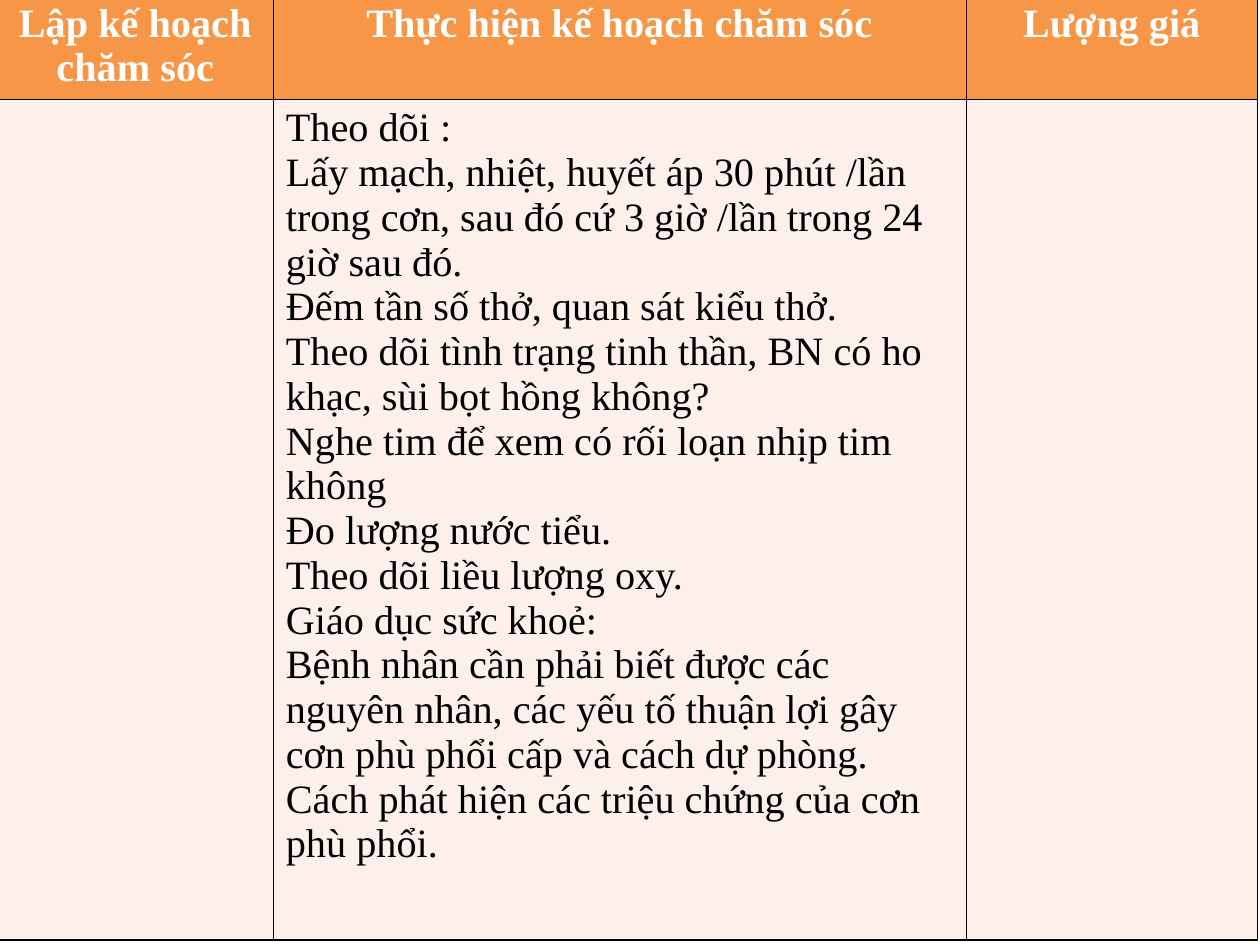
from lxml import etree
from pptx import Presentation
from pptx.dml.color import RGBColor
from pptx.enum.text import PP_ALIGN
from pptx.oxml.ns import qn
from pptx.util import Cm, Pt

ORANGE = RGBColor(0xF7, 0x96, 0x46)
PEACH = RGBColor(0xFD, 0xEF, 0xE9)
WHITE = RGBColor(0xFF, 0xFF, 0xFF)
BLACK = RGBColor(0x00, 0x00, 0x00)
CENTER, LEFT = PP_ALIGN.CENTER, PP_ALIGN.LEFT

WIDTHS = [5.56, 13.97, 5.87]
HEIGHTS = [2.11, 16.94]
HEADS = ["Lập kế hoạch chăm sóc", "Thực hiện kế hoạch chăm sóc", "Lượng giá"]
CARE = [
    "Theo dõi :",
    "Lấy mạch, nhiệt, huyết áp 30 phút /lần trong cơn, sau đó cứ 3 giờ /lần trong 24 giờ sau đó.",
    "Đếm tần số thở, quan sát kiểu thở.",
    "Theo dõi tình trạng tinh thần, BN có ho khạc, sùi bọt hồng không?",
    "Nghe tim để xem có rối loạn nhịp tim không",
    "Đo lượng nước tiểu.",
    "Theo dõi liều lượng oxy.",
    "Giáo dục sức khoẻ:",
    "Bệnh nhân cần phải biết được các nguyên nhân, các yếu tố thuận lợi gây cơn phù phổi cấp và cách dự phòng.",
    "Cách phát hiện các triệu chứng của cơn phù phổi.",
]
ROWS = [HEADS, ["", "\n".join(CARE), ""]]


def add_edges(cell):
    """Draw a thin black border on all four sides of the cell."""
    props = cell._tc.get_or_add_tcPr()
    for spot, side in enumerate(("a:lnL", "a:lnR", "a:lnT", "a:lnB")):
        line = etree.Element(qn(side), w=str(Pt(1)))
        fill = etree.SubElement(line, qn("a:solidFill"))
        etree.SubElement(fill, qn("a:srgbClr"), val=str(BLACK))
        props.insert(spot, line)  # borders come before the fill


prs = Presentation()
prs.slide_width, prs.slide_height = Cm(25.4), Cm(19.05)
slide = prs.slides.add_slide(prs.slide_layouts[6])

frame = slide.shapes.add_table(
    len(ROWS), len(WIDTHS), Cm(-0.05), Cm(-0.1), Cm(sum(WIDTHS)), Cm(sum(HEIGHTS)))
table = frame.table
for col, width in zip(table.columns, WIDTHS):
    col.width = Cm(width)
for row, height in zip(table.rows, HEIGHTS):
    row.height = Cm(height)

STYLES = [(ORANGE, WHITE, True, CENTER), (PEACH, BLACK, False, LEFT)]
for row, texts, (back, ink, bold, align) in zip(table.rows, ROWS, STYLES):
    for cell, text in zip(row.cells, texts):
        cell.fill.solid()
        cell.fill.fore_color.rgb = back
        add_edges(cell)
        cell.text_frame.text = text
        for para in cell.text_frame.paragraphs:
            para.alignment = align
            for run in para.runs:
                run.font.name = "Times New Roman"
                run.font.size = Pt(23)
                run.font.bold = bold
                run.font.color.rgb = ink

prs.save("out.pptx")
